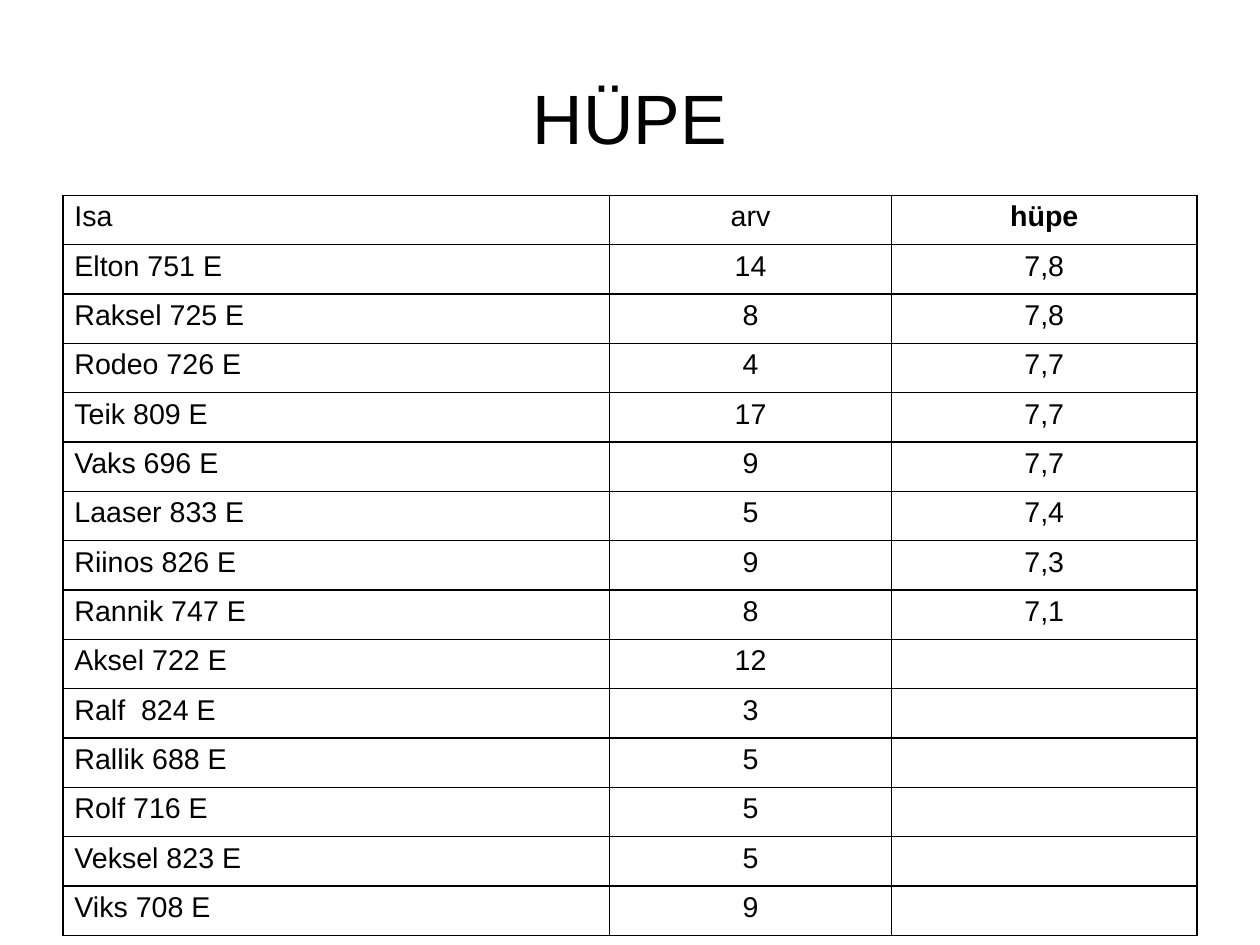
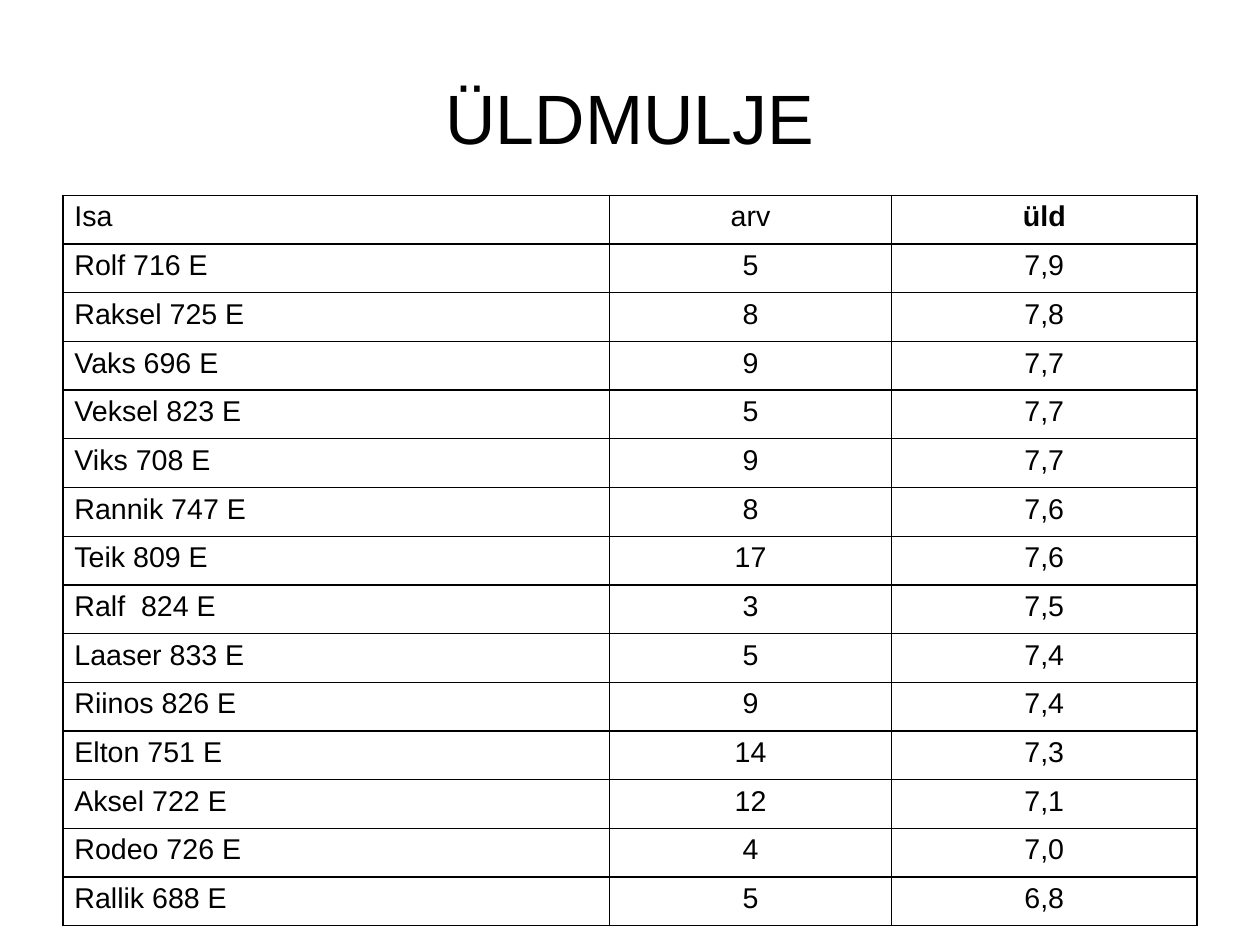
from dataclasses import dataclass

import pptx
import pptx.dml.color
import pptx.enum.text
import pptx.oxml.ns
import pptx.util
from lxml import etree

ALIGN = pptx.enum.text.PP_ALIGN
ANCHOR = pptx.enum.text.MSO_ANCHOR
FIT = pptx.enum.text.MSO_AUTO_SIZE
WIDE = pptx.util.Pt(793.75)
HIGH = pptx.util.Pt(595.25)


@dataclass(frozen=True)
class Theme:
    font: str = "Arial"
    ink: str = "000000"
    paper: str = "FFFFFF"
    title: int = 44
    body: int = 18
    rule: int = 1


@dataclass(frozen=True)
class Box:
    left: float
    top: float
    width: float
    height: float

    def place(self) -> tuple[int, int, int, int]:
        return (
            round(WIDE * self.left / 100),
            round(HIGH * self.top / 100),
            round(WIDE * self.width / 100),
            round(HIGH * self.height / 100),
        )


@dataclass(frozen=True)
class Page:
    title: str
    score: str
    height: float
    marks: dict[str, str]


THEME = Theme()
HEAD = Box(5, 4, 90, 16.67)
COLS = (4.78, 2.47, 2.67)
COUNTS = {
    "Elton 751 E": 14,
    "Raksel 725 E": 8,
    "Rodeo 726 E": 4,
    "Teik 809 E": 17,
    "Vaks 696 E": 9,
    "Laaser 833 E": 5,
    "Riinos 826 E": 9,
    "Rannik 747 E": 8,
    "Aksel 722 E": 12,
    "Ralf  824 E": 3,
    "Rallik 688 E": 5,
    "Rolf 716 E": 5,
    "Veksel 823 E": 5,
    "Viks 708 E": 9,
}
PAGES = (
    Page("HÜPE", "hüpe", 78.33, {
        "Elton 751 E": "7,8",
        "Raksel 725 E": "7,8",
        "Rodeo 726 E": "7,7",
        "Teik 809 E": "7,7",
        "Vaks 696 E": "7,7",
        "Laaser 833 E": "7,4",
        "Riinos 826 E": "7,3",
        "Rannik 747 E": "7,1",
        "Aksel 722 E": "",
        "Ralf  824 E": "",
        "Rallik 688 E": "",
        "Rolf 716 E": "",
        "Veksel 823 E": "",
        "Viks 708 E": "",
    }),
    Page("ÜLDMULJE", "üld", 77.36, {
        "Rolf 716 E": "7,9",
        "Raksel 725 E": "7,8",
        "Vaks 696 E": "7,7",
        "Veksel 823 E": "7,7",
        "Viks 708 E": "7,7",
        "Rannik 747 E": "7,6",
        "Teik 809 E": "7,6",
        "Ralf  824 E": "7,5",
        "Laaser 833 E": "7,4",
        "Riinos 826 E": "7,4",
        "Elton 751 E": "7,3",
        "Aksel 722 E": "7,1",
        "Rodeo 726 E": "7,0",
        "Rallik 688 E": "6,8",
    }),
)


def write(frame, text: str, size: int, align, bold: bool = False) -> None:
    frame.text = text
    line = frame.paragraphs[0]
    line.alignment = align
    font = line.font
    font.name = THEME.font
    font.size = pptx.util.Pt(size)
    font.bold = bold
    font.color.rgb = pptx.dml.color.RGBColor.from_string(THEME.ink)


def edge(cell) -> None:
    props = cell._tc.get_or_add_tcPr()
    tag = pptx.oxml.ns.qn
    for side in ("a:lnL", "a:lnR", "a:lnT", "a:lnB"):
        line = etree.SubElement(
            props, tag(side), w=str(pptx.util.Pt(THEME.rule))
        )
        fill = etree.SubElement(line, tag("a:solidFill"))
        etree.SubElement(fill, tag("a:srgbClr"), val=THEME.ink)


def head(slide, text: str) -> None:
    title = slide.shapes.title
    title.left, title.top, title.width, title.height = HEAD.place()
    frame = title.text_frame
    frame.auto_size = FIT.NONE
    frame.word_wrap = True
    frame.vertical_anchor = ANCHOR.MIDDLE
    frame.margin_left = frame.margin_right = 0
    frame.margin_top = frame.margin_bottom = 0
    write(frame, text, THEME.title, ALIGN.CENTER)


def grid(slide, page: Page) -> None:
    rows = [("Isa", "arv", page.score)]
    rows += [(name, str(COUNTS[name]), mark)
             for name, mark in page.marks.items()]
    box = Box(HEAD.left, HEAD.top + HEAD.height, HEAD.width, page.height)
    left, top, width, height = box.place()
    table = slide.shapes.add_table(
        len(rows), len(COLS), left, top, width, height
    ).table
    table.first_row = table.horz_banding = False
    for col, share in zip(table.columns, COLS):
        col.width = round(width * share / sum(COLS))
    for r, row in enumerate(rows):
        table.rows[r].height = round(height / len(rows))
        for c, text in enumerate(row):
            cell = table.cell(r, c)
            edge(cell)
            cell.fill.solid()
            cell.fill.fore_color.rgb = pptx.dml.color.RGBColor.from_string(
                THEME.paper
            )
            write(
                cell.text_frame, text, THEME.body,
                ALIGN.CENTER if c else ALIGN.LEFT,
                bold=r == 0 and c == len(COLS) - 1,
            )


def main() -> None:
    deck = pptx.Presentation()
    deck.slide_width, deck.slide_height = WIDE, HIGH
    plain = deck.slide_layouts.get_by_name("Title Only")
    for page in PAGES:
        slide = deck.slides.add_slide(plain)
        head(slide, page.title)
        grid(slide, page)
    deck.save("out.pptx")


if __name__ == "__main__":
    main()
